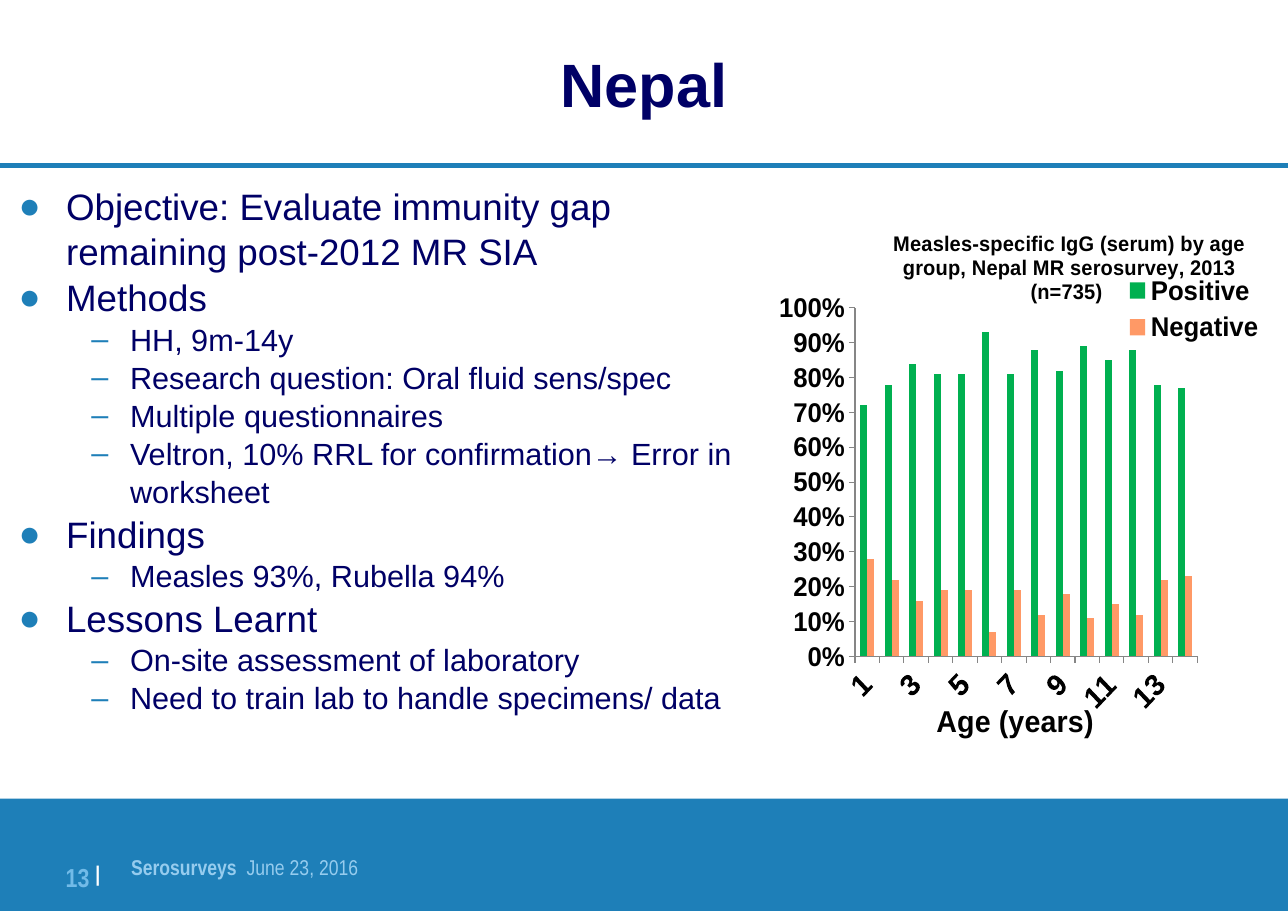
from lxml import etree
from pptx import Presentation
from pptx.chart.data import CategoryChartData
from pptx.dml.color import RGBColor
from pptx.enum.chart import XL_CHART_TYPE, XL_LEGEND_POSITION, XL_TICK_MARK
from pptx.enum.shapes import MSO_CONNECTOR, MSO_SHAPE
from pptx.enum.text import MSO_ANCHOR, PP_ALIGN
from pptx.oxml.ns import qn
from pptx.util import Inches, Pt

COLUMNS = XL_CHART_TYPE.COLUMN_CLUSTERED
LEGEND_RIGHT = XL_LEGEND_POSITION.RIGHT
TICK_OUT, TICK_NONE = XL_TICK_MARK.OUTSIDE, XL_TICK_MARK.NONE
STRAIGHT, RECTANGLE = MSO_CONNECTOR.STRAIGHT, MSO_SHAPE.RECTANGLE
TOP, MIDDLE = MSO_ANCHOR.TOP, MSO_ANCHOR.MIDDLE
LEFT, CENTER, RIGHT = PP_ALIGN.LEFT, PP_ALIGN.CENTER, PP_ALIGN.RIGHT

COLORS = {
    "navy": "000066", "blue": "1E7FB8", "pale": "96CCEE", "sky": "72BBE8",
    "white": "FFFFFF", "black": "000000", "axis": "868686",
    "Positive": "00B050", "Negative": "FF9966",
}
WIDTH, HEIGHT = 11.69, 8.27

# Level and wording of each body paragraph
BODY = [
    (0, "Objective: Evaluate immunity gap remaining post-2012 MR SIA"),
    (0, "Methods"),
    (1, "HH, 9m-14y"),
    (1, "Research question: Oral fluid sens/spec"),
    (1, "Multiple questionnaires"),
    (1, "Veltron, 10% RRL for confirmation→ Error in worksheet"),
    (0, "Findings"),
    (1, "Measles 93%, Rubella 94%"),
    (0, "Lessons Learnt"),
    (1, "On-site assessment of laboratory"),
    (1, "Need to train lab to handle specimens/ data"),
]
# Bullet, left margin, hanging indent and text size by level
LEVELS = [("●", 0.43, 0.43, 24), ("–", 1.01, 0.35, 20)]

SERIES = {
    "Positive": [0.72, 0.78, 0.84, 0.81, 0.81, 0.93, 0.81,
                 0.88, 0.82, 0.89, 0.85, 0.88, 0.78, 0.77],
    "Negative": [0.28, 0.22, 0.16, 0.19, 0.19, 0.07, 0.19,
                 0.12, 0.18, 0.11, 0.15, 0.12, 0.22, 0.23],
}


def color(name):
    return RGBColor.from_string(COLORS[name])


def style_font(font, size, name, bold=False, face="Arial"):
    font.size, font.bold, font.name = Pt(size), bold, face
    font.color.rgb = color(name)


def add_span(para, text, size, name, bold=False, face="Arial"):
    span = para.add_run()
    span.text = text
    style_font(span.font, size, name, bold, face)
    return span


def add_box(page, box, anchor=TOP, align=LEFT):
    frame = page.shapes.add_textbox(*map(Inches, box)).text_frame
    frame.margin_left = frame.margin_right = 0
    frame.margin_top = frame.margin_bottom = 0
    frame.word_wrap = True
    frame.vertical_anchor = anchor
    frame.paragraphs[0].alignment = align
    return frame


def add_bullet(para, symbol, margin, hanging):
    props = para._p.get_or_add_pPr()
    props.set("marL", str(Inches(margin)))
    props.set("indent", str(-Inches(hanging)))
    tint = etree.SubElement(props, qn("a:buClr"))
    etree.SubElement(tint, qn("a:srgbClr"), val=COLORS["blue"])
    etree.SubElement(props, qn("a:buFont"), typeface="Arial")
    etree.SubElement(props, qn("a:buChar"), char=symbol)


def add_title(page, box):
    left, top, width, height = box
    para = add_box(page, box, MIDDLE, CENTER).paragraphs[0]
    span = add_span(para, "Nepal", 40, "navy", True)
    # Pale text shadow
    effects = etree.Element(qn("a:effectLst"))
    shadow = etree.SubElement(effects, qn("a:outerShdw"), dist="25400", dir="2700000")
    etree.SubElement(shadow, qn("a:srgbClr"), val=COLORS["pale"])
    span._r.rPr.find(qn("a:solidFill")).addnext(effects)
    # Rule under the title
    bottom = Inches(top + height)
    rule = page.shapes.add_connector(STRAIGHT, Inches(left), bottom,
                                     Inches(left + width), bottom)
    rule.line.color.rgb = color("blue")
    rule.line.width = Pt(3)
    etree.SubElement(rule._element.spPr, qn("a:effectLst"))


def add_body(page, box):
    frame = add_box(page, box)
    for index, (level, text) in enumerate(BODY):
        para = frame.add_paragraph() if index else frame.paragraphs[0]
        symbol, margin, hanging, size = LEVELS[level]
        para.level = level
        para.line_spacing = 1.04
        add_bullet(para, symbol, margin, hanging)
        add_span(para, text, size, "navy")


def place_part(part, index, target=None, **shares):
    """Give a chart part a manual layout in shares of the chart."""
    for old in part.findall(qn("c:layout")):
        part.remove(old)
    layout = etree.Element(qn("c:layout"))
    manual = etree.SubElement(layout, qn("c:manualLayout"))
    if target:
        etree.SubElement(manual, qn("c:layoutTarget"), val=target)
    for mode in ("xMode", "yMode"):
        etree.SubElement(manual, qn("c:" + mode), val="edge")
    for key, share in shares.items():
        etree.SubElement(manual, qn("c:" + key), val=str(share))
    part.insert(index, layout)


def style_axis(axis, size):
    axis.has_major_gridlines = False
    axis.major_tick_mark, axis.minor_tick_mark = TICK_OUT, TICK_NONE
    axis.format.line.color.rgb = color("axis")
    axis.format.line.width = Pt(0.75)
    style_font(axis.tick_labels.font, size, "black", True)


def add_age_chart(page, box):
    data = CategoryChartData(number_format="0%")
    data.categories = [str(age) for age in range(1, 15)]
    for name, values in SERIES.items():
        data.add_series(name, values)
    chart = page.shapes.add_chart(COLUMNS, *map(Inches, box), data).chart
    style_font(chart.font, 10, "black")

    # Columns
    plot = chart.plots[0]
    plot.gap_width, plot.overlap, plot.vary_by_categories = 150, 0, False
    for series in plot.series:
        series.format.fill.solid()
        series.format.fill.fore_color.rgb = color(series.name)
        series.invert_if_negative = False
    place_part(chart._chartSpace.chart.plotArea, 0, "inner",
               x=0.095, y=0.193, w=0.742, h=0.653)

    # Axes
    ages, shares = chart.category_axis, chart.value_axis
    style_axis(ages, 20)
    style_axis(shares, 18)
    ages._element.txPr.find(qn("a:bodyPr")).set("rot", "-2700000")
    skip = etree.Element(qn("c:tickLblSkip"), val="2")
    ages._element.find(qn("c:noMultiLvlLbl")).addprevious(skip)
    shares.minimum_scale, shares.maximum_scale, shares.major_unit = 0, 1, 0.1
    shares.tick_labels.number_format = "0%"
    shares.tick_labels.number_format_is_linked = False

    # Titles
    heading = "Measles-specific IgG (serum) by age group, Nepal MR serosurvey, 2013 (n=735) "
    for title, text, size, left, top in (
            (chart.chart_title, heading, 14, 0.17, 0.04),
            (ages.axis_title, "Age (years)", 20, 0.26, 0.92)):
        add_span(title.text_frame.paragraphs[0], text, size, "black", True)
        place_part(title._element, 1, x=left, y=top)

    # Legend
    chart.has_legend = True
    legend = chart.legend
    legend.position = LEGEND_RIGHT
    legend.include_in_layout = False
    style_font(legend.font, 18, "black", True)
    place_part(legend._element, 1, x=0.67, y=0.12, w=0.32, h=0.15)


def add_footer(page, box):
    left, top, width, height = box
    band = page.shapes.add_shape(RECTANGLE, *map(Inches, box))
    band.shadow.inherit = False
    band.fill.solid()
    band.fill.fore_color.rgb = color("blue")
    band.line.fill.background()
    # Survey name and date
    para = add_box(page, (left + 1.19, top + 0.5, 5.43, 0.52)).paragraphs[0]
    add_span(para, "Serosurveys  ", 14, "pale", True, "Arial Narrow")
    add_span(para, "June 23, 2016", 14, "pale", False, "Arial Narrow")
    # Page number
    para = add_box(page, (left + 0.46, top + 0.47, 0.45, 0.4), align=RIGHT).paragraphs[0]
    add_span(para, "13 ", 17, "sky", True, "Arial Narrow")
    bar = add_span(para, "|", 24, "white", True, "Arial Narrow")
    bar._r.rPr.set("baseline", "14000")


def main():
    deck = Presentation()
    deck.slide_width, deck.slide_height = Inches(WIDTH), Inches(HEIGHT)
    page = deck.slides.add_slide(deck.slide_layouts[6])
    add_footer(page, (0, 7.25, WIDTH, 1.02))
    add_title(page, (0, 0, WIDTH, 1.5))
    add_body(page, (0.17, 1.65, 6.85, 5.56))
    add_age_chart(page, (7.07, 1.86, 4.48, 4.93))
    deck.save("out.pptx")


if __name__ == "__main__":
    main()
